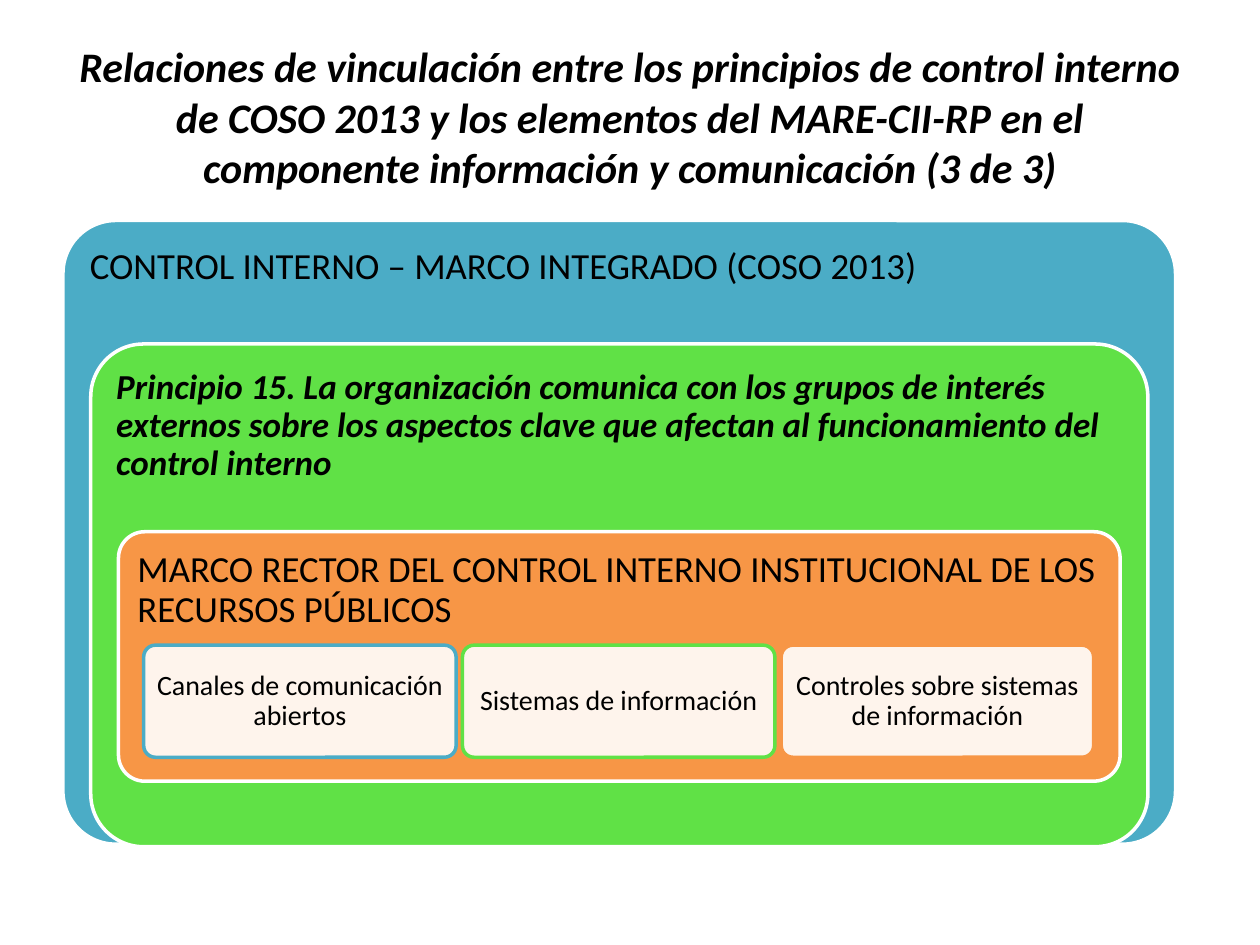
from lxml.etree import SubElement
from pptx import Presentation
from pptx.dml.color import RGBColor
from pptx.enum.shapes import MSO_SHAPE
from pptx.enum.text import MSO_ANCHOR, PP_ALIGN
from pptx.oxml.ns import qn
from pptx.util import Inches, Pt

COLORS = {
    "black": "000000",
    "white": "FFFFFF",
    "blue": "4BACC6",
    "green": "60E146",
    "orange": "F79646",
}
ELEMENTS = [
    ("Canales de comunicación abiertos", "blue"),
    ("Sistemas de información", "green"),
    ("Controles sobre sistemas de información", "orange"),
]


def color(name):
    return RGBColor.from_string(COLORS[name])


def write_text(frame, text, size, align=PP_ALIGN.LEFT, anchor=MSO_ANCHOR.TOP,
               emphasis=False, line_spacing=None, space_after=None):
    frame.word_wrap = True
    frame.vertical_anchor = anchor
    para = frame.paragraphs[0]
    para.alignment = align
    if line_spacing:
        para.line_spacing = line_spacing
    if space_after:
        para.space_after = space_after
    span = para.add_run()
    span.text = text
    span.font.name = "Calibri"
    span.font.size = Pt(size)
    span.font.bold = emphasis
    span.font.italic = emphasis
    span.font.color.rgb = color("black")


def set_opacity(shape, percent):
    fill = shape.fill._xPr.find(qn("a:solidFill"))
    SubElement(fill[0], qn("a:alpha"), val=str(percent * 1000))


def add_panel(page, box, text, size, fill, line="white", corner=0.105,
              inset=0.09, **text_format):
    panel = page.shapes.add_shape(
        MSO_SHAPE.ROUNDED_RECTANGLE, *(Inches(length) for length in box))
    panel.adjustments[0] = corner
    panel.shadow.inherit = False
    panel.fill.solid()
    panel.fill.fore_color.rgb = color(fill)
    panel.line.color.rgb = color(line)
    panel.line.width = Pt(2)
    frame = panel.text_frame
    frame.margin_left = frame.margin_right = Inches(inset)
    frame.margin_top = frame.margin_bottom = Inches(inset)
    write_text(frame, text, size, line_spacing=0.9,
               space_after=Pt(round(size * 0.35)), **text_format)
    return panel


def add_title(page, box):
    title = page.shapes.title
    title.left, title.top, title.width, title.height = map(Inches, box)
    write_text(
        title.text_frame,
        "Relaciones de vinculación entre los principios de control interno "
        "de COSO 2013 y los elementos del MARE-CII-RP en el componente "
        "información y comunicación (3 de 3)",
        24, align=PP_ALIGN.CENTER, anchor=MSO_ANCHOR.MIDDLE, emphasis=True)


def add_frameworks(page):
    add_panel(page, (0.5, 1.75, 8.83, 4.95),
              "CONTROL INTERNO – MARCO INTEGRADO (COSO 2013)",
              21, "blue", corner=0.085)
    add_panel(page, (0.72, 2.73, 8.39, 3.99),
              "Principio 15. La organización comunica con los grupos de "
              "interés externos sobre los aspectos clave que afectan al "
              "funcionamiento del control interno",
              20, "green", inset=0.08, emphasis=True)
    add_panel(page, (0.94, 4.22, 7.95, 1.98),
              "MARCO RECTOR DEL CONTROL INTERNO INSTITUCIONAL DE LOS "
              "RECURSOS PÚBLICOS",
              21, "orange")


def add_elements(page, box, gap=0.05):
    left, top, width, height = box
    count = len(ELEMENTS)
    card_width = (width - gap * (count - 1)) / count
    for index, (text, line) in enumerate(ELEMENTS):
        card_box = (left + index * (card_width + gap), top, card_width, height)
        card = add_panel(page, card_box, text, 16, "white", line=line,
                         inset=0.07, align=PP_ALIGN.CENTER,
                         anchor=MSO_ANCHOR.MIDDLE)
        set_opacity(card, 90)


def main():
    deck = Presentation()
    deck.slide_width, deck.slide_height = Inches(10), Inches(7.5)
    page = deck.slides.add_slide(deck.slide_layouts[5])
    add_title(page, (0.5, 0.3, 9, 1.25))
    add_frameworks(page)
    add_elements(page, (1.14, 5.12, 7.54, 0.89))
    deck.save("out.pptx")


if __name__ == "__main__":
    main()
